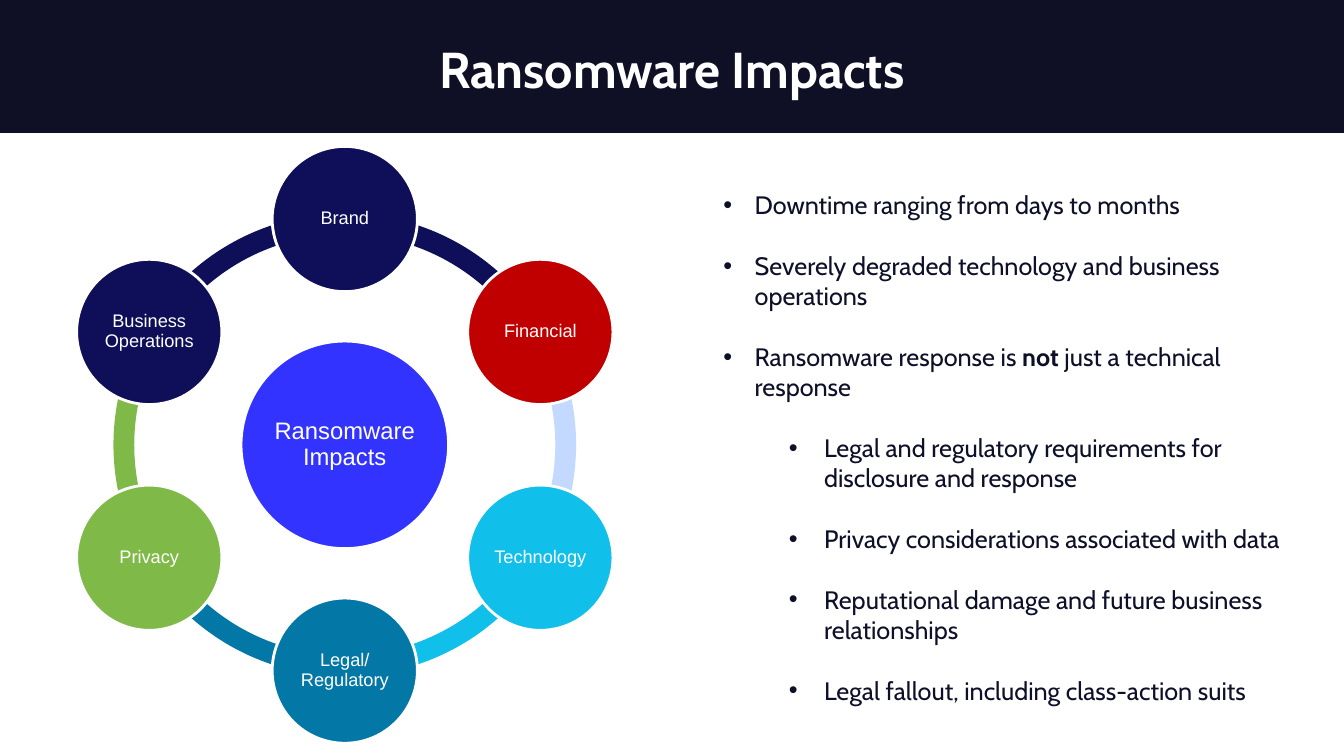
import math

import lxml.etree
import pptx
import pptx.dml.color
import pptx.enum.shapes
import pptx.enum.text
import pptx.oxml.ns
import pptx.util

Cm, Pt = pptx.util.Cm, pptx.util.Pt
SHAPE = pptx.enum.shapes.MSO_SHAPE
ALIGN = pptx.enum.text.PP_ALIGN
ANCHOR = pptx.enum.text.MSO_ANCHOR
COLORS = {
    "white": "FEFFFE", "band": "0F1025", "ink": "0E0F28", "core": "3333FF",
    "navy": "0F0F59", "red": "C00000", "pale": "C3D9FF", "cyan": "10BFEA",
    "teal": "0378A6", "green": "7FBA49",
}


def color(name):
    return pptx.dml.color.RGBColor.from_string(COLORS[name])


def disc(x, y, size, fill, text, points):
    """Draw a labelled circle centred on x, y, in centimetres."""
    shape = slide.shapes.add_shape(
        SHAPE.OVAL, Cm(x - size / 2), Cm(y - size / 2), Cm(size), Cm(size))
    shape.shadow.inherit = False
    shape.fill.solid()
    shape.fill.fore_color.rgb = color(fill)
    shape.line.color.rgb = color("white")
    shape.line.width = Pt(2)
    frame = shape.text_frame
    frame.word_wrap = True
    frame.vertical_anchor = ANCHOR.MIDDLE
    frame.margin_left = frame.margin_right = Cm(0.05)
    frame.margin_top = frame.margin_bottom = Cm(0.05)
    para = frame.paragraphs[0]
    para.text = text
    para.alignment = ALIGN.CENTER
    para.line_spacing = 0.9
    para.font.name = "Arial"
    para.font.size = Pt(points)
    para.font.color.rgb = color("white")


deck = pptx.Presentation()
deck.slide_width, deck.slide_height = Cm(33.87), Cm(19.05)
slide = deck.slides.add_slide(deck.slide_layouts[6])
slide.background.fill.solid()
slide.background.fill.fore_color.rgb = color("white")

# Title band
band = slide.shapes.add_shape(SHAPE.RECTANGLE, 0, 0, deck.slide_width, Cm(3.35))
band.shadow.inherit = False
band.fill.solid()
band.fill.fore_color.rgb = color("band")
band.line.fill.background()

title = slide.shapes.add_textbox(0, Cm(0.74), deck.slide_width, Cm(1.88)).text_frame
title.word_wrap = True
title.vertical_anchor = ANCHOR.BOTTOM
para = title.paragraphs[0]
para.text = "Ransomware Impacts"
para.alignment = ALIGN.CENTER
para.line_spacing = 0.9
para.font.name = "Cabin"
para.font.size = Pt(36)
para.font.bold = True
para.font.color.rgb = color("white")

# Impact wheel, clockwise from the top: label, disc colour, colour of the arc that follows
IMPACTS = [
    ("Brand", "navy", "navy"),
    ("Financial", "red", "pale"),
    ("Technology", "cyan", "cyan"),
    ("Legal/\nRegulatory", "teal", "teal"),
    ("Privacy", "green", "green"),
    ("Business Operations", "navy", "navy"),
]
MID_X, MID_Y, RADIUS, RING = 8.69, 11.21, 5.69, 11.66
STEP = 360 / len(IMPACTS)

for i, (label, fill, link) in enumerate(IMPACTS):
    start = (270 + i * STEP) % 360
    arc = slide.shapes.add_shape(
        SHAPE.BLOCK_ARC, Cm(MID_X - RING / 2), Cm(MID_Y - RING / 2), Cm(RING), Cm(RING))
    arc.shadow.inherit = False
    # Angles are held in 60000ths of a degree, adjustments in 100000ths
    arc.adjustments[0] = start * 0.6
    arc.adjustments[1] = (start + STEP) % 360 * 0.6
    arc.adjustments[2] = 0.045
    arc.fill.solid()
    arc.fill.fore_color.rgb = color(link)
    arc.line.fill.background()

disc(MID_X, MID_Y, 5.23, "core", "Ransomware Impacts", 17)
for i, (label, fill, link) in enumerate(IMPACTS):
    turn = math.radians(270 + i * STEP)
    disc(MID_X + RADIUS * math.cos(turn), MID_Y + RADIUS * math.sin(turn),
         3.66, fill, label, 13)

# Bullets: level and runs, where every second run is bold
POINTS = [
    (0, ["Downtime ranging from days to months"]),
    (0, ["Severely degraded technology and business operations"]),
    (0, ["Ransomware response is ", "not ", "just a technical response"]),
    (1, ["Legal and regulatory requirements for disclosure and response"]),
    (1, ["Privacy considerations associated with data"]),
    (1, ["Reputational damage and future business relationships"]),
    (1, ["Legal fallout, including class-action suits"]),
]
INDENTS = [(0.79, 0.79), (2.54, 0.89)]

body = slide.shapes.add_textbox(Cm(17.98), Cm(4.65), Cm(15.54), Cm(13.36)).text_frame
body.word_wrap = True
for i, (level, runs) in enumerate(POINTS):
    para = body.add_paragraph() if i else body.paragraphs[0]
    left, hang = INDENTS[level]
    para.level = level
    props = para._p.get_or_add_pPr()
    props.set("marL", str(Cm(left)))
    props.set("indent", str(-Cm(hang)))
    for tag, key, value in (("a:buFont", "typeface", "Arial"), ("a:buChar", "char", "•")):
        lxml.etree.SubElement(props, pptx.oxml.ns.qn(tag)).set(key, value)
    if i:
        para.space_before = Pt(21.8)
    para.font.name = "Cabin"
    para.font.size = Pt(18)
    para.font.color.rgb = color("ink")
    for j, text in enumerate(runs):
        run = para.add_run()
        run.text = text
        if j % 2:
            run.font.bold = True

deck.save("out.pptx")
